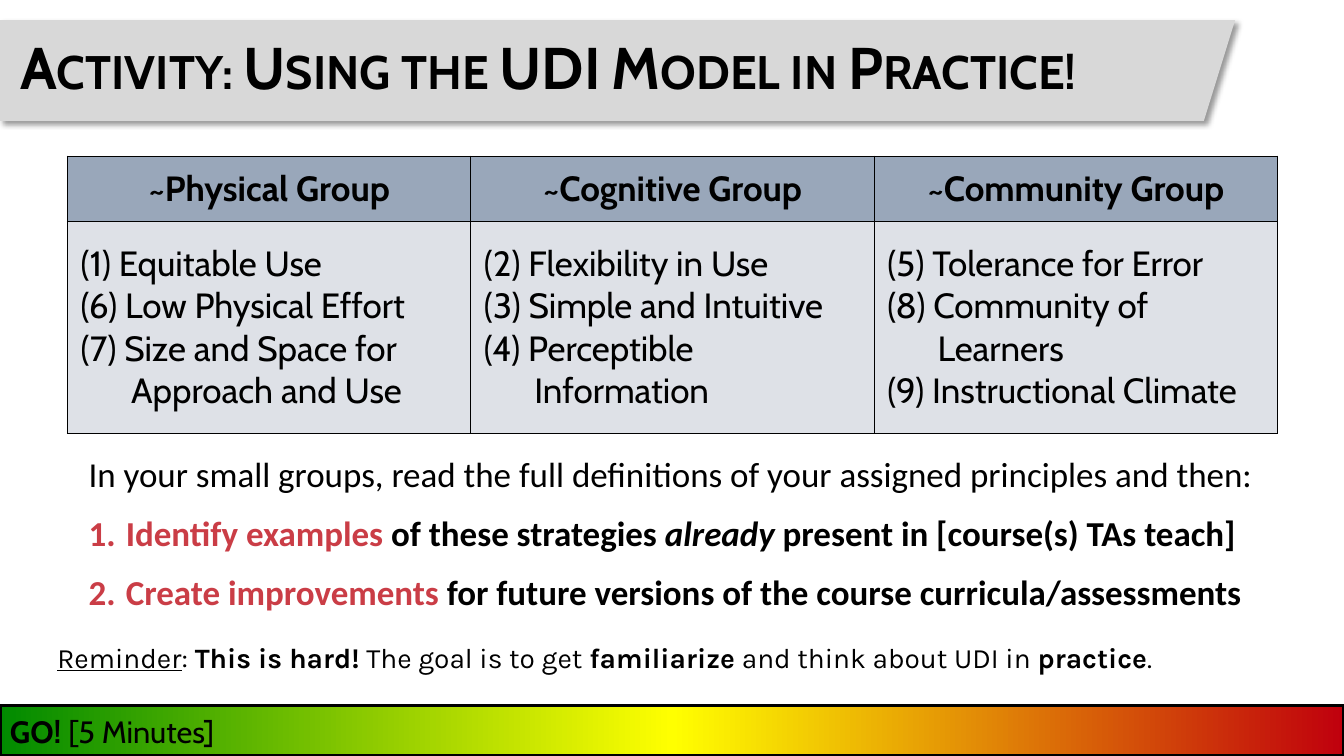
from copy import deepcopy

from lxml import etree
from pptx import Presentation
from pptx.dml.color import RGBColor
from pptx.enum.shapes import MSO_SHAPE
from pptx.enum.text import MSO_ANCHOR, PP_ALIGN
from pptx.oxml import parse_xml
from pptx.oxml.ns import nsdecls, qn
from pptx.util import Inches, Pt

RECTANGLE = MSO_SHAPE.RECTANGLE
MIDDLE = MSO_ANCHOR.MIDDLE
CENTER = PP_ALIGN.CENTER
rgb = RGBColor.from_string
BLACK, RED = "000000", "CA3D46"


def add_runs(paragraph, font_name, size, runs):
    """Each run is (text, style letters from b, i and u, optional colour)."""
    for text, style, *colour in runs:
        run = paragraph.add_run()
        run.text = text
        font = run.font
        font.name, font.size = font_name, Pt(size)
        font.bold, font.italic, font.underline = ("b" in style, "i" in style, "u" in style)
        font.color.rgb = rgb(colour[0] if colour else BLACK)


def add_text_frame(left, top, width, height, anchor=MSO_ANCHOR.TOP):
    box = slide.shapes.add_textbox(Inches(left), Inches(top), Inches(width), Inches(height))
    frame = box.text_frame
    frame.word_wrap = True
    frame.vertical_anchor = anchor
    return frame


prs = Presentation()
prs.slide_width, prs.slide_height = Inches(13.33), Inches(7.5)
slide = prs.slides.add_slide(prs.slide_layouts[6])

# Title banner with a slanted right end and a soft shadow
outline = slide.shapes.build_freeform(Inches(0), Inches(0.2))
outline.add_line_segments(
    [(Inches(x), Inches(y)) for x, y in [(12.25, 0.2), (11.94, 1.2), (0, 1.2)]], close=True)
banner = outline.convert_to_shape()
banner.fill.solid()
banner.fill.fore_color.rgb = rgb("D8D8D8")
banner.line.fill.background()
banner.shadow.inherit = False
banner_effects = banner._element.spPr.find(qn("a:effectLst"))
banner_effects.append(parse_xml(
    f'<a:outerShdw {nsdecls("a")} blurRad="{Pt(4)}" dist="{Pt(3)}" dir="2700000" algn="tl" rotWithShape="0">'
    f'<a:srgbClr val="{BLACK}"><a:alpha val="40000"/></a:srgbClr></a:outerShdw>'))

title = add_text_frame(0, 0.2, 12.25, 1, MIDDLE)
title.margin_left = Inches(0.2)
heading = title.paragraphs[0]
heading.line_spacing = 0.9
add_runs(heading, "Cabin", 42, [("Activity: Using the UDI Model in Practice!", "b")])
heading.runs[0].font._element.set("cap", "small")

# Table of groups and their principles
groups = {
    "~Physical Group": ["(1) Equitable Use", "(6) Low Physical Effort",
                        "(7) Size and Space for Approach and Use"],
    "~Cognitive Group": ["(2) Flexibility in Use", "(3) Simple and Intuitive",
                         "(4) Perceptible Information"],
    "~Community Group": ["(5) Tolerance for Error", "(8) Community of Learners",
                         "(9) Instructional Climate"],
}
wrapping = ("(7)", "(4)", "(8)")
group_table = slide.shapes.add_table(
    2, len(groups), Inches(0.67), Inches(1.55), Inches(12), Inches(2.75)).table
group_table.rows[0].height = Inches(0.65)
group_table.rows[1].height = Inches(2.1)

for column, (group, principles) in enumerate(groups.items()):
    group_table.columns[column].width = Inches(4)
    for row, (lines, fill) in enumerate([([group], "99A7BA"), (principles, "DEE1E7")]):
        cell = group_table.cell(row, column)
        cell.vertical_anchor = MIDDLE
        cell.margin_left = cell.margin_right = Inches(0.13)
        cell.margin_top = cell.margin_bottom = Inches(0.07)
        for number, line in enumerate(lines):
            paragraph = cell.text_frame.paragraphs[0] if number == 0 else cell.text_frame.add_paragraph()
            if row == 0:
                paragraph.alignment = CENTER
            if line.startswith(wrapping):
                properties = paragraph._p.get_or_add_pPr()
                properties.set("marL", str(Inches(0.5)))
                properties.set("indent", str(Inches(-0.5)))
            add_runs(paragraph, "Cabin", 25, [(line, "b" if row == 0 else "")])
        cell_properties = cell._tc.get_or_add_tcPr()
        for side in ("lnL", "lnR", "lnT", "lnB"):
            cell_properties.append(parse_xml(
                f'<a:{side} {nsdecls("a")} w="{Pt(1)}"><a:solidFill>'
                f'<a:srgbClr val="{BLACK}"/></a:solidFill></a:{side}>'))
        cell.fill.solid()
        cell.fill.fore_color.rgb = rgb(fill)

# Instructions with two numbered tasks
instructions = add_text_frame(0.78, 4.44, 11.88, 1.7)
steps = [
    [("In your small groups, read the full definitions of your assigned principles and then:", "")],
    [("Identify examples ", "b", RED), ("of these strategies ", "b"), ("already", "bi"),
     (" present in [course(s) TAs teach]", "b")],
    [("Create improvements ", "b", RED),
     ("for future versions of the course curricula/assessments", "b")],
]
for number, runs in enumerate(steps):
    paragraph = instructions.paragraphs[0] if number == 0 else instructions.add_paragraph()
    if number:
        properties = paragraph._p.get_or_add_pPr()
        properties.set("marL", str(Inches(0.37)))
        properties.set("indent", str(Inches(-0.37)))
        etree.SubElement(properties, qn("a:buFont")).set("typeface", "+mj-lt")
        etree.SubElement(properties, qn("a:buAutoNum")).set("type", "arabicPeriod")
    paragraph.space_after = Pt(12)
    add_runs(paragraph, "Calibri", 25, runs)

# Reminder
reminder = add_text_frame(0.47, 6.31, 12.39, 0.44)
add_runs(reminder.paragraphs[0], "Karla", 20, [
    ("Reminder", "u"), (": ", ""), ("This is hard!", "b"), (" The goal is to get ", ""),
    ("familiarize", "b"), (" and think about UDI in ", ""), ("practice", "b"), (".", "")])

# Timer bar running from green through yellow to red
timer_bar = slide.shapes.add_shape(RECTANGLE, Inches(0), Inches(7), Inches(13.33), Inches(0.5))
timer_bar.shadow.inherit = False
timer_bar.line.color.rgb = rgb(BLACK)
timer_bar.line.width = Pt(2.5)
timer_bar.fill.gradient()
timer_bar.fill.gradient_angle = 0
stop_list = timer_bar._element.spPr.find(qn("a:gradFill")).find(qn("a:gsLst"))
stop_list.append(deepcopy(stop_list[0]))
for stop, position, colour in zip(
        timer_bar.fill.gradient_stops, (0, 0.5, 1), ("008A00", "FFFF00", "C0000D")):
    stop.position = position
    stop.color.rgb = rgb(colour)

timer = add_text_frame(0, 7, 3.68, 0.5, MIDDLE)
add_runs(timer.paragraphs[0], "Cabin", 22, [("GO!", "b"), (" [5 Minutes]", "")])

prs.save("out.pptx")
